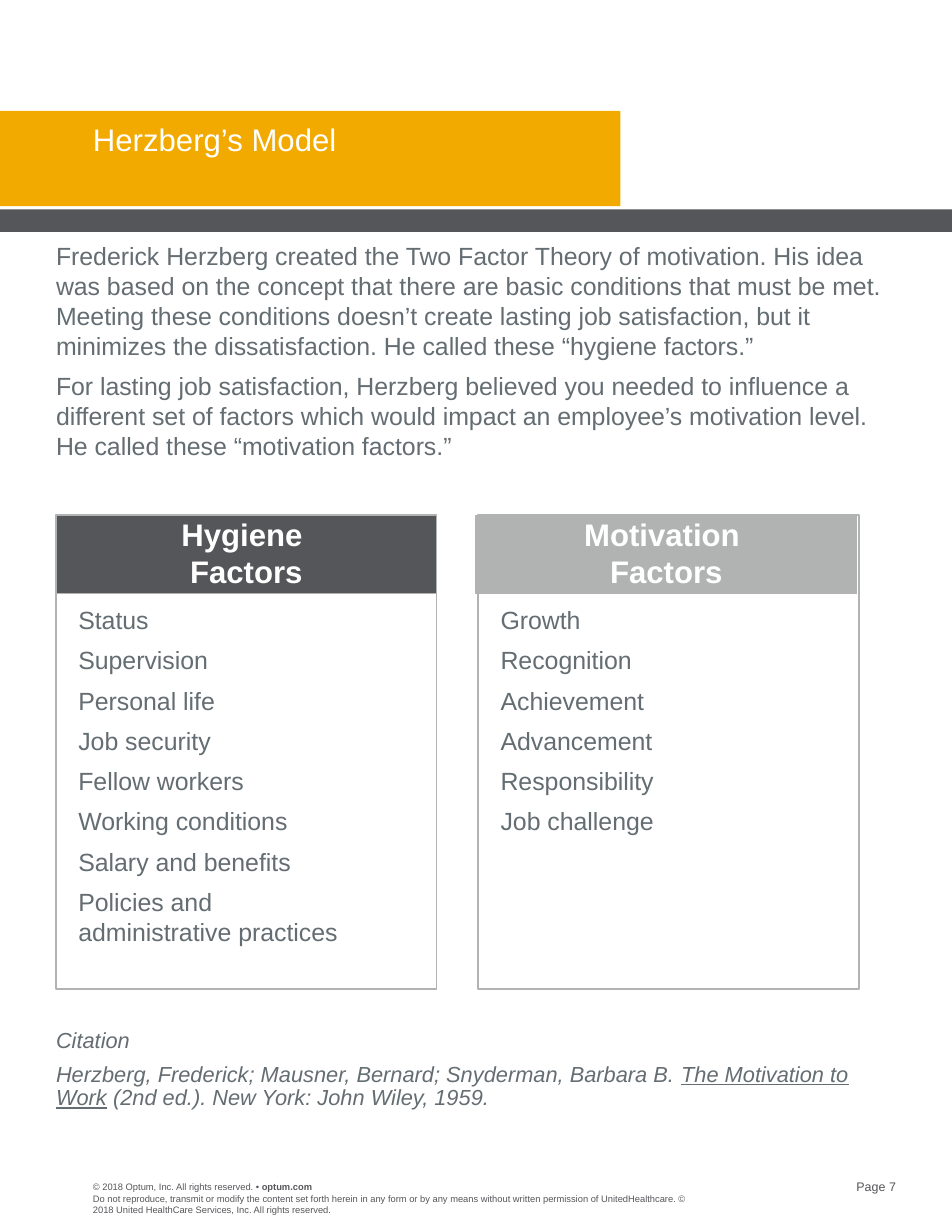
import dataclasses

import pptx
import pptx.dml.color
import pptx.enum.shapes
import pptx.enum.text
import pptx.util

ALIGN = pptx.enum.text.PP_ALIGN
ANCHOR = pptx.enum.text.MSO_ANCHOR

# The page is a grid of half-inch cells
COLUMNS, ROWS = 17, 22
CELL = pptx.util.Inches(0.5)
MARGIN, INDENT = 1, 1.66
CARD_TOP, CARD_WIDTH, CARD_HEIGHT, HEADER_HEIGHT = 9.2, 6.8, 8.46, 1.4


@dataclasses.dataclass(frozen=True)
class Theme:
    font: str = "Arial"
    amber: str = "F2AA00"
    dark: str = "55565A"
    gray: str = "B1B3B3"
    body: str = "646D72"
    white: str = "FFFFFF"
    heading_size: float = 20
    body_size: float = 16
    citation_size: float = 14
    page_size: float = 8
    legal_size: float = 6
    gap: float = 6.7


THEME = Theme()

INTRO = [
    "Frederick Herzberg created the Two Factor Theory of motivation. His idea "
    "was based on the concept that there are basic conditions that must be met. "
    "Meeting these conditions doesn’t create lasting job satisfaction, but it "
    "minimizes the dissatisfaction. He called these “hygiene factors.”",
    "For lasting job satisfaction, Herzberg believed you needed to influence a "
    "different set of factors which would impact an employee’s motivation level. "
    "He called these “motivation factors.”",
]
HYGIENE = ["Status", "Supervision", "Personal life", "Job security", "Fellow workers",
           "Working conditions", "Salary and benefits",
           "Policies and \vadministrative practices"]
MOTIVATION = ["Growth", "Recognition", "Achievement", "Advancement",
              "Responsibility", "Job challenge"]
CITATION = [
    "Citation",
    [("Herzberg, Frederick; Mausner, Bernard; Snyderman, Barbara B. ", {}),
     ("The Motivation to Work", {"underline": True}),
     (" (2nd ed.). New York: John Wiley, 1959.", {})],
]
COPYRIGHT = [[("© 2018 Optum, Inc. All rights reserved. • ", {}),
              ("optum.com", {"bold": True})]]
LEGAL = ["Do not reproduce, transmit or modify the content set forth herein in any form "
         "or by any means without written permission of UnitedHealthcare. "
         "© 2018 United HealthCare Services, Inc. All rights reserved."]


def color(code):
    return pptx.dml.color.RGBColor.from_string(code)


def cells(*lengths):
    return [round(length * CELL) for length in lengths]


def write(shape, paragraphs, size, ink, insets=(0, 0, 0, 0), anchor=ANCHOR.TOP,
          align=ALIGN.LEFT, after=0, spacing=1.0, bold=False, italic=False):
    """Fill a shape with paragraphs, each a string or a list of (text, style) spans."""
    frame = shape.text_frame
    frame.word_wrap = True
    frame.vertical_anchor = anchor
    (frame.margin_left, frame.margin_top,
     frame.margin_right, frame.margin_bottom) = cells(*insets)
    for index, content in enumerate(paragraphs):
        para = frame.add_paragraph() if index else frame.paragraphs[0]
        if isinstance(content, str):
            para.text = content
        else:
            for text, style in content:
                span = para.add_run()
                span.text = text
                for name, value in style.items():
                    setattr(span.font, name, value)
        para.alignment = align
        para.space_after = pptx.util.Pt(after)
        para.line_spacing = spacing
        font = para.font
        font.name, font.size = THEME.font, pptx.util.Pt(size)
        font.bold, font.italic = bold, italic
        font.color.rgb = color(ink)


def add_text(page, place, paragraphs, size, ink, **style):
    write(page.shapes.add_textbox(*cells(*place)), paragraphs, size, ink, **style)


def add_block(page, place, fill=None, line=None, width=1):
    block = page.shapes.add_shape(
        pptx.enum.shapes.MSO_SHAPE.RECTANGLE, *cells(*place))
    block.shadow.inherit = False
    if fill:
        block.fill.solid()
        block.fill.fore_color.rgb = color(fill)
    else:
        block.fill.background()
    if line:
        block.line.color.rgb = color(line)
        block.line.width = pptx.util.Pt(width)
    else:
        block.line.fill.background()
    return block


def add_card(page, left, header_left, heading, items, fill):
    body = add_block(page, (left, CARD_TOP, CARD_WIDTH, CARD_HEIGHT), line=THEME.gray)
    write(body, items, THEME.body_size, THEME.body,
          insets=(0.4, 1.6, 0.2, 0), after=THEME.gap)
    header = add_block(page, (header_left, CARD_TOP, CARD_WIDTH, HEADER_HEIGHT),
                       fill, THEME.gray, 0.75)
    write(header, [heading], THEME.heading_size, THEME.white, insets=(0, 0, 0, 0.06),
          anchor=ANCHOR.MIDDLE, align=ALIGN.CENTER, bold=True)


def main():
    deck = pptx.Presentation()
    deck.slide_width, deck.slide_height = cells(COLUMNS, ROWS)
    page = deck.slides.add_slide(deck.slide_layouts[6])

    # Title band
    add_block(page, (0, 1.98, 11.08, 1.7), THEME.amber)
    add_block(page, (0, 3.74, COLUMNS, 0.4), THEME.dark)
    add_text(page, (INDENT, 2.22, 9, 1.22), ["Herzberg’s Model"],
             THEME.heading_size, THEME.white, spacing=0.9)

    # Introduction
    add_text(page, (MARGIN, 4.3, 14.98, 3.96), INTRO,
             THEME.body_size, THEME.body, after=THEME.gap)

    # The two groups of factors
    add_card(page, MARGIN, MARGIN, "Hygiene \vFactors", HYGIENE, THEME.dark)
    add_card(page, 8.54, 8.5, "Motivation \vFactors", MOTIVATION, THEME.gray)

    # Citation
    add_text(page, (MARGIN, 18.38, 14.98, 1.46), CITATION, THEME.citation_size,
             THEME.body, after=THEME.gap, spacing=0.9, italic=True)

    # Footer
    add_text(page, (INDENT, 21.1, 4, 0.2), COPYRIGHT, THEME.legal_size, THEME.dark,
             bold=None)
    add_text(page, (INDENT, 21.3, 10.6, 0.4), LEGAL, THEME.legal_size, THEME.dark)
    add_text(page, (14.38, 21.06, 1.62, 0.26), ["Page 7"], THEME.page_size,
             THEME.dark, align=ALIGN.RIGHT)

    deck.save("out.pptx")


if __name__ == "__main__":
    main()
